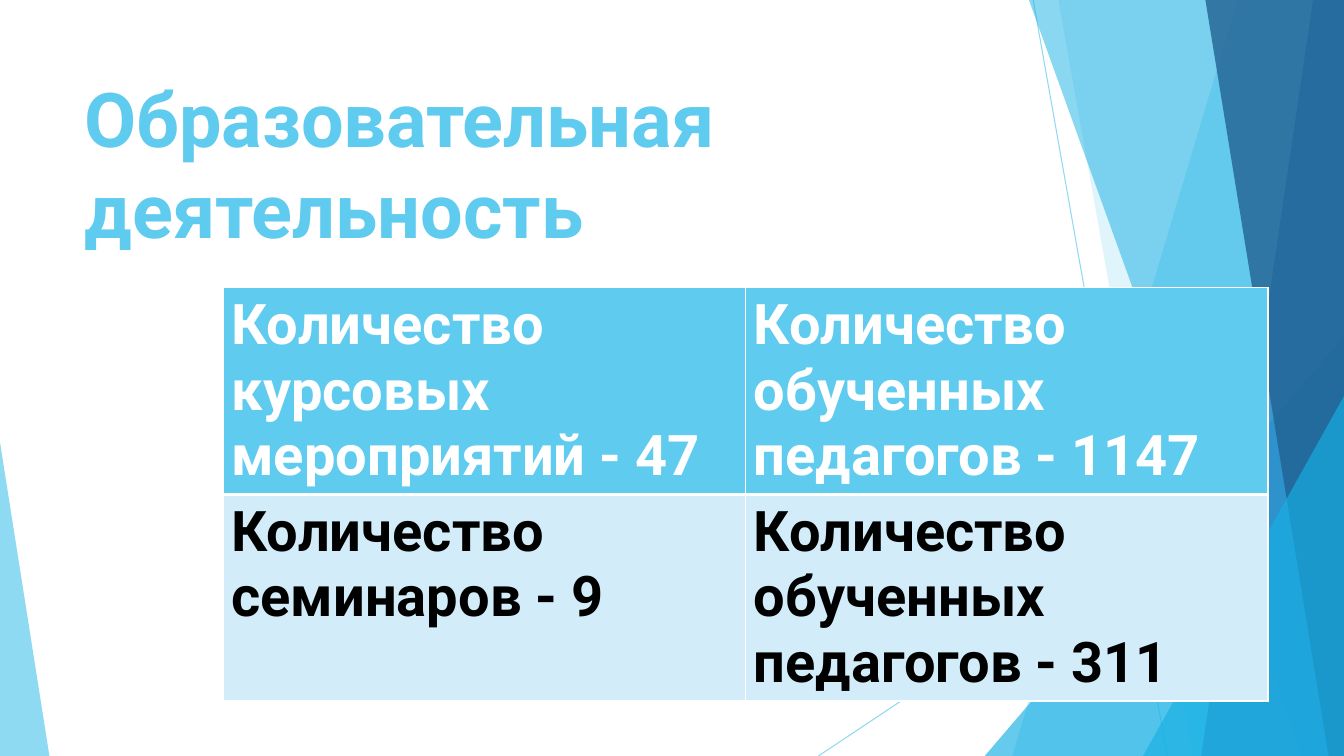
import dataclasses

import lxml.etree
import pptx
import pptx.dml.color
import pptx.enum.shapes
import pptx.enum.text
import pptx.oxml.ns
import pptx.util


@dataclasses.dataclass(frozen=True)
class Theme:
    font: str = "Roboto"
    title_size: float = 54
    cell_size: float = 40
    sky: str = "5FCBEF"
    azure: str = "17B0E4"
    blue: str = "2E83C3"
    navy: str = "226292"
    pale: str = "D2ECF9"
    white: str = "FFFFFF"
    black: str = "000000"


@dataclasses.dataclass(frozen=True)
class Facet:
    top_x: float
    bottom_x: float
    color: str
    opacity: int


@dataclasses.dataclass(frozen=True)
class Triangle:
    left: float
    top: float
    width: float
    apex: float
    color: str
    opacity: int


@dataclasses.dataclass(frozen=True)
class Ray:
    start: tuple[float, float]
    end: tuple[float, float]


@dataclasses.dataclass(frozen=True)
class TableRow:
    texts: tuple[str, str]
    fill: str
    color: str
    borders: dict[str, float]


THEME = Theme()
PAGE_WIDTH, PAGE_HEIGHT = 960, 540
COLUMN_WIDTH, ROW_HEIGHT = 373.2, 147

RAYS = (Ray((738, 0), (833.75, 540)), Ray((960, 290), (584.6, 540)))

DECORATIONS = (
    Facet(884, 723, THEME.sky, 36),
    Facet(756, 852, THEME.sky, 20),
    Triangle(703.4, 240, 256.6, 1, THEME.azure, 66),
    Facet(735, 929.5, THEME.azure, 50),
    Facet(938, 858, THEME.blue, 70),
    Facet(861, 949, THEME.navy, 80),
    Triangle(816.5, 283, 143.5, 1, THEME.azure, 66),
    Triangle(0, 316, 35.3, 0, THEME.sky, 70),
)

ROWS = (
    TableRow(
        ("Количество курсовых мероприятий - 47", "Количество обученных педагогов - 1147"),
        THEME.sky, THEME.white, {"lnL": 1, "lnR": 1, "lnT": 1, "lnB": 3},
    ),
    TableRow(
        ("Количество семинаров - 9", "Количество обученных педагогов - 311"),
        THEME.pale, THEME.black, {"lnL": 1, "lnR": 1, "lnT": 3, "lnB": 1},
    ),
)


def rgb(color: str) -> pptx.dml.color.RGBColor:
    return pptx.dml.color.RGBColor.from_string(color)


def add_child(parent, tag: str, **attributes: str):
    return lxml.etree.SubElement(parent, pptx.oxml.ns.qn(tag), attributes)


def set_opacity(shape, opacity: int) -> None:
    for color in shape.element.spPr.iter(pptx.oxml.ns.qn("a:srgbClr")):
        add_child(color, "a:alpha", val=str(opacity * 1000))


def style_text(frame, text: str, size: float, color: str) -> None:
    frame.text = text
    paragraph = frame.paragraphs[0]
    paragraph.alignment = pptx.enum.text.PP_ALIGN.LEFT
    paragraph.font.name = THEME.font
    paragraph.font.size = pptx.util.Pt(size)
    paragraph.font.bold = True
    paragraph.font.color.rgb = rgb(color)


def draw_ray(page, ray: Ray) -> None:
    line = page.shapes.add_connector(
        pptx.enum.shapes.MSO_CONNECTOR.STRAIGHT,
        *(pptx.util.Pt(value) for value in ray.start + ray.end),
    )
    line.line.color.rgb = rgb(THEME.sky)
    line.line.width = pptx.util.Pt(0.75)
    set_opacity(line, 70)
    add_child(line.element.spPr, "a:effectLst")


def draw_decoration(page, item: Facet | Triangle) -> None:
    if isinstance(item, Facet):
        corners = [(PAGE_WIDTH, 0), (PAGE_WIDTH, PAGE_HEIGHT), (item.bottom_x, PAGE_HEIGHT)]
        builder = page.shapes.build_freeform(pptx.util.Pt(item.top_x), 0)
        builder.add_line_segments([(pptx.util.Pt(x), pptx.util.Pt(y)) for x, y in corners])
        shape = builder.convert_to_shape()
    else:
        frame = (item.left, item.top, item.width, PAGE_HEIGHT - item.top)
        shape = page.shapes.add_shape(
            pptx.enum.shapes.MSO_SHAPE.ISOSCELES_TRIANGLE,
            *(pptx.util.Pt(value) for value in frame),
        )
        shape.adjustments[0] = item.apex
    shape.shadow.inherit = False
    shape.fill.solid()
    shape.fill.fore_color.rgb = rgb(item.color)
    shape.line.fill.background()
    set_opacity(shape, item.opacity)


def place_title(page) -> None:
    title = page.shapes.title
    title.left, title.top = pptx.util.Pt(53.3), pptx.util.Pt(48)
    title.width, title.height = pptx.util.Pt(676.8), pptx.util.Pt(104)
    style_text(title.text_frame, "Образовательная деятельность", THEME.title_size, THEME.sky)
    title.text_frame.word_wrap = True
    title.text_frame.auto_size = pptx.enum.text.MSO_AUTO_SIZE.NONE
    title.text_frame.vertical_anchor = pptx.enum.text.MSO_ANCHOR.TOP
    page.shapes.element.append(title.element)


def fill_cell(cell, text: str, row: TableRow) -> None:
    properties = cell._tc.get_or_add_tcPr()
    for side, width in row.borders.items():
        border = add_child(properties, f"a:{side}", w=str(pptx.util.Pt(width)))
        add_child(add_child(border, "a:solidFill"), "a:srgbClr", val=THEME.white)
    cell.fill.solid()
    cell.fill.fore_color.rgb = rgb(row.fill)
    cell.margin_left = cell.margin_right = pptx.util.Pt(6)
    cell.margin_top = cell.margin_bottom = pptx.util.Pt(3.6)
    style_text(cell.text_frame, text, THEME.cell_size, row.color)


def draw_table(page) -> None:
    table = page.shapes.add_table(
        len(ROWS), 2, pptx.util.Pt(159.4), pptx.util.Pt(205.5),
        pptx.util.Pt(2 * COLUMN_WIDTH), pptx.util.Pt(len(ROWS) * ROW_HEIGHT),
    ).table
    table.horz_banding = False
    for row_index, row in enumerate(ROWS):
        for column_index, text in enumerate(row.texts):
            fill_cell(table.cell(row_index, column_index), text, row)


def main() -> None:
    deck = pptx.Presentation()
    deck.slide_width = pptx.util.Pt(PAGE_WIDTH)
    deck.slide_height = pptx.util.Pt(PAGE_HEIGHT)
    page = deck.slides.add_slide(deck.slide_layouts.get_by_name("Title Only"))
    for ray in RAYS:
        draw_ray(page, ray)
    for item in DECORATIONS:
        draw_decoration(page, item)
    place_title(page)
    draw_table(page)
    deck.save("out.pptx")


if __name__ == "__main__":
    main()
